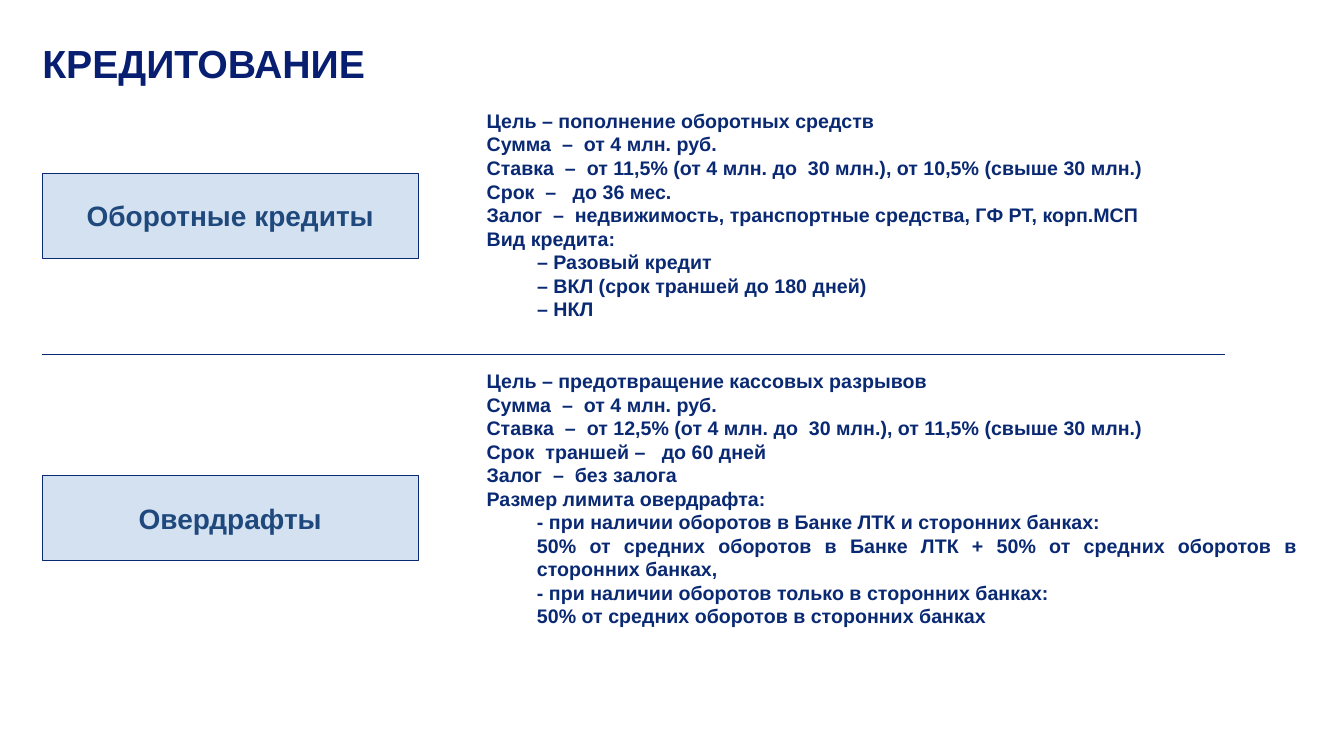
from lxml import etree
from pptx import Presentation
from pptx import util as u
from pptx.dml import color
from pptx.enum import shapes, text
from pptx.oxml import ns

NAVY = "0A2973"
LEFT = 30.24
DETAILS_LEFT = 340.5

WORKING_CAPITAL = [
    ("Цель – пополнение оборотных средств", 0),
    ("Сумма  –  от 4 млн. руб.", 0),
    ("Ставка  –  от 11,5% (от 4 млн. до  30 млн.), от 10,5% (свыше 30 млн.)", 0),
    ("Срок  –   до 36 мес.", 0),
    ("Залог  –  недвижимость, транспортные средства, ГФ РТ, корп.МСП", 0),
    ("Вид кредита:", 0),
    ("– Разовый кредит", 1),
    ("– ВКЛ (срок траншей до 180 дней)", 1),
    ("– НКЛ", 1),
]
OVERDRAFTS = [
    ("Цель – предотвращение кассовых разрывов", 0),
    ("Сумма  –  от 4 млн. руб.", 0),
    ("Ставка  –  от 12,5% (от 4 млн. до  30 млн.), от 11,5% (свыше 30 млн.)", 0),
    ("Срок  траншей –   до 60 дней", 0),
    ("Залог  –  без залога", 0),
    ("Размер лимита овердрафта:", 0),
    ("- при наличии оборотов в Банке ЛТК и сторонних банках:", 1),
    ("50% от средних оборотов в Банке ЛТК + 50% от средних оборотов в сторонних банках,", 1),
    ("- при наличии оборотов только в сторонних банках:", 1),
    ("50% от средних оборотов в сторонних банках", 1),
]


def rgb(value):
    """Turn a hex string into a colour."""
    return color.RGBColor.from_string(value)


def points(*lengths):
    """Turn numbers into point lengths."""
    return [u.Pt(length) for length in lengths]


def write(shape, lines, size, colour, align="LEFT", anchor="TOP", spacing=None, margins=None):
    """Fill a shape with bold Arial lines, given as pairs of text and level."""
    frame = shape.text_frame
    frame.word_wrap = True
    frame.vertical_anchor = getattr(text.MSO_ANCHOR, anchor)
    if margins is not None:
        frame.margin_left = frame.margin_right = u.Pt(margins)
        frame.margin_top = frame.margin_bottom = u.Pt(margins)
    for index, (line, level) in enumerate(lines):
        paragraph = frame.add_paragraph() if index else frame.paragraphs[0]
        paragraph.alignment = getattr(text.PP_ALIGN, align)
        if spacing:
            paragraph.line_spacing = spacing
        if level:
            paragraph.level = level
            properties = paragraph._p.get_or_add_pPr()
            properties.set("marL", str(u.Pt(36 * level)))
            properties.set("indent", "0")
        run = paragraph.add_run()
        run.text = line
        run.font.name = "Arial"
        run.font.size = u.Pt(size)
        run.font.bold = True
        run.font.color.rgb = rgb(colour)


def add_title(slide, title, left, top, width, height):
    """Place the slide heading."""
    box = slide.shapes.add_textbox(*points(left, top, width, height))
    write(box, [(title, 0)], 28, "081E70", anchor="MIDDLE", spacing=0.9, margins=0)


def add_product(slide, name, details, top, width, height, label_offset):
    """Place a loan product: its label on the left and its terms on the right."""
    terms = slide.shapes.add_textbox(*points(DETAILS_LEFT, top, width, height))
    write(terms, details, 14, NAVY, align="JUSTIFY")
    label = slide.shapes.add_shape(
        shapes.MSO_SHAPE.RECTANGLE, *points(LEFT, top + label_offset, 268.5, 60.5))
    label.shadow.inherit = False
    label.fill.solid()
    label.fill.fore_color.rgb = rgb("D4E1F0")
    label.line.color.rgb = rgb(NAVY)
    label.line.width = u.Pt(0.75)
    write(label, [(name, 0)], 20, "1F497D", align="CENTER", anchor="MIDDLE")


def add_divider(slide, left, right, top):
    """Draw the horizontal rule between the products."""
    divider = slide.shapes.add_connector(
        shapes.MSO_CONNECTOR.STRAIGHT, *points(left, top, right, top))
    divider.line.color.rgb = rgb(NAVY)
    divider.line.width = u.Pt(0.75)
    etree.SubElement(divider._element.spPr, ns.qn("a:effectLst"))


def main():
    """Build and save the lending slide."""
    presentation = Presentation()
    presentation.slide_width, presentation.slide_height = points(960, 540)
    slide = presentation.slides.add_slide(presentation.slide_layouts[6])
    add_title(slide, "КРЕДИТОВАНИЕ", LEFT, 31, 677.5, 31.7)
    add_divider(slide, LEFT, 874.8, 253.2)
    add_product(slide, "Оборотные кредиты", WORKING_CAPITAL, 74.2, 517, 159.8, 49.7)
    add_product(slide, "Овердрафты", OVERDRAFTS, 260, 593.3, 193.7, 79.8)
    presentation.save("out.pptx")


if __name__ == "__main__":
    main()
